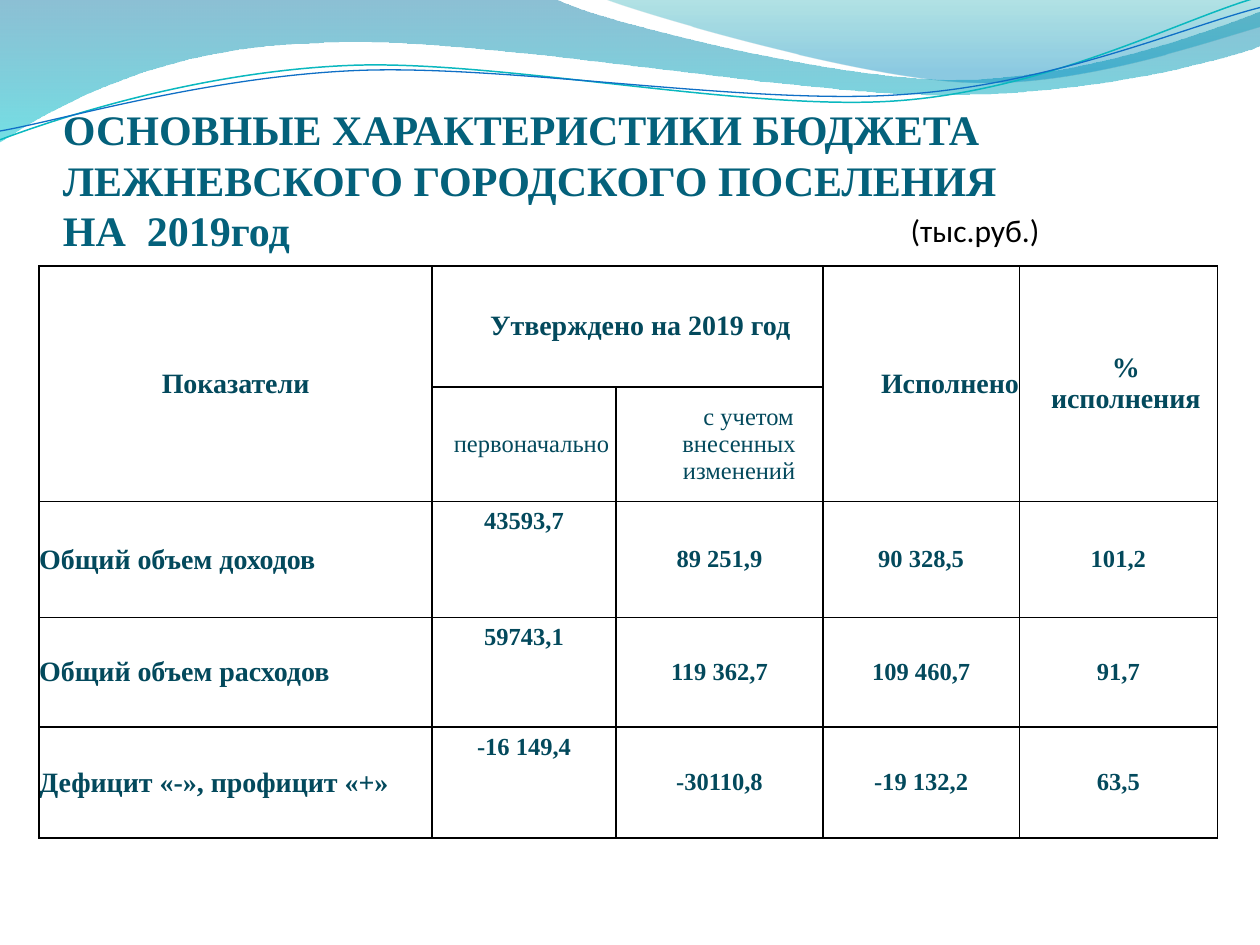
from dataclasses import dataclass

import pptx
import pptx.dml.color
import pptx.enum.text
import pptx.oxml
import pptx.oxml.ns
import pptx.util
from lxml import etree
from pptx.util import Cm

RGBColor = pptx.dml.color.RGBColor
Align = pptx.enum.text.PP_ALIGN
Anchor = pptx.enum.text.MSO_ANCHOR

BLACK = RGBColor(0x00, 0x00, 0x00)
TITLE_TEAL = RGBColor(0x04, 0x61, 0x7B)
TABLE_TEAL = RGBColor(0x03, 0x49, 0x5C)
DEEP_BLUE = RGBColor(0x00, 0x74, 0xA1)
CYAN = RGBColor(0x00, 0xC6, 0xCF)
SEA_GREEN = RGBColor(0x00, 0xA1, 0xA9)
SKY_BLUE = RGBColor(0x00, 0x8B, 0xBF)
LINE_TEAL = RGBColor(0x0A, 0xB8, 0xBF)
LINE_BLUE = RGBColor(0x0F, 0x6F, 0xC6)

SERIF = "Times New Roman"
WAVE_UNIT = Cm(2.54) / 100  # wave points are hundredths of an inch


@dataclass
class Stop:
    position: float
    color: RGBColor
    opacity: int


@dataclass
class Wave:
    """A start point, then steps: one point for a line, three for a Bezier curve."""
    start: tuple
    steps: list
    stops: tuple = ()
    line: RGBColor | None = None
    width: float = 0


@dataclass
class Cell:
    row: int
    column: int
    text: str
    size: float = 14
    bold: bool = True
    align: Align = Align.CENTER
    indent: float = 0
    first_indent: float = 0
    space_after: float = 0
    last_row: int | None = None
    last_column: int | None = None
    padded: bool = False


WAVES = [
    Wave((0, 0), [[(440, -1)], [(476, 17), (664, 63), (758, 63)],
                  [(853, 63), (958, 26), (1000, 9)], [(1001, 36)],
                  [(983, 44), (870, 76), (746, 75)], [(622, 75), (382, 28), (257, 34)],
                  [(129, 36), (46, 83), (-1, 113)]],
         stops=(Stop(0, DEEP_BLUE, 45), Stop(1, CYAN, 55))),
    Wave((479, -1), [[(509, 11), (682, 62), (769, 65)], [(856, 69), (961, 32), (1000, 21)],
                     [(1000, 0)]],
         stops=(Stop(0, SEA_GREEN, 30), Stop(0.8, SKY_BLUE, 45))),
    Wave((0, 111), [[(48, 93), (158, 57), (277, 52)], [(395, 47), (593, 89), (713, 80)],
                    [(833, 71), (938, 15), (998, -2)]], line=LINE_TEAL, width=0.85),
    Wave((0, 104), [[(47, 96), (164, 61), (283, 56)], [(403, 51), (597, 84), (717, 75)],
                    [(836, 67), (941, 21), (1000, 6)]], line=LINE_BLUE, width=0.75),
]

COLUMN_WIDTHS = [7.92, 3.71, 4.17, 3.96, 3.99]
ROW_HEIGHTS = [2.44, 2.31, 2.34, 2.21, 2.23]
HEADERS = [
    Cell(0, 0, "Показатели", size=16, last_row=1),
    Cell(0, 1, "Утверждено на 2019 год", size=16, align=Align.LEFT, indent=1.17, last_column=2),
    Cell(0, 3, "Исполнено", size=16, align=Align.LEFT, indent=1.17, last_row=1),
    Cell(0, 4, "% исполнения", size=16, indent=0.3, space_after=10.5, last_row=1),
    Cell(1, 1, "первоначально", bold=False, indent=0.3),
    Cell(1, 2, "с учетом внесенных изменений", bold=False, indent=0.79, first_indent=0.38),
]
RECORDS = [
    ("Общий объем доходов", "43593,7", "89 251,9", "90 328,5", "101,2"),
    ("Общий объем расходов", "59743,1", "119 362,7", "109 460,7", "91,7"),
    ("Дефицит «-», профицит «+»", "-16 149,4", "-30110,8", "-19 132,2", "63,5"),
]


def write_text(frame, text: str, *, size: float, color: RGBColor, font: str = SERIF,
               bold: bool = False, align: Align = Align.LEFT, indent: float = 0,
               first_indent: float = 0, space_after: float = 0) -> None:
    para = frame.paragraphs[0]
    para.alignment = align
    para.space_after = pptx.util.Pt(space_after)
    properties = para._p.get_or_add_pPr()
    properties.set("marL", str(Cm(indent)))
    properties.set("indent", str(Cm(first_indent)))
    for number, line in enumerate(text.split("\n")):
        if number:
            para.add_line_break()
        span = para.add_run()
        span.text = line
        span.font.name = font
        span.font.size = pptx.util.Pt(size)
        span.font.bold = bold
        span.font.color.rgb = color


def add_text_box(page, left: float, top: float, width: float, height: float):
    box = page.shapes.add_textbox(Cm(left), Cm(top), Cm(width), Cm(height))
    box.text_frame.word_wrap = True
    return box.text_frame


def bend_segments(shape, steps: list) -> None:
    """Join each three straight segments of a curved step into one Bezier curve."""
    segments = iter(list(shape._element.spPr.iter(pptx.oxml.ns.qn("a:lnTo"))))
    for step in steps:
        lines = [next(segments) for _ in step]
        if len(lines) == 1:
            continue
        curve = etree.Element(pptx.oxml.ns.qn("a:cubicBezTo"))
        lines[0].addprevious(curve)
        for line in lines:
            curve.append(line[0])
            line.getparent().remove(line)


def draw_wave(page, wave: Wave) -> None:
    builder = page.shapes.build_freeform(*wave.start, scale=WAVE_UNIT)
    builder.add_line_segments([point for step in wave.steps for point in step],
                              close=bool(wave.stops))
    shape = builder.convert_to_shape()
    bend_segments(shape, wave.steps)
    shape.shadow.inherit = False
    if wave.stops:
        shape.line.fill.background()
        shape.fill.gradient()
        shape.fill.gradient_angle = 270
        for target, stop in zip(shape.fill.gradient_stops, wave.stops):
            target.position = stop.position
            target.color.rgb = stop.color
        for color, stop in zip(shape._element.spPr.iter(pptx.oxml.ns.qn("a:srgbClr")), wave.stops):
            alpha = etree.SubElement(color, pptx.oxml.ns.qn("a:alpha"))
            alpha.set("val", str(stop.opacity * 1000))
    else:
        shape.fill.background()
        shape.line.color.rgb = wave.line
        shape.line.width = pptx.util.Pt(wave.width)


def add_borders(cell) -> None:
    properties = cell._tc.get_or_add_tcPr()
    for side in ("lnL", "lnR", "lnT", "lnB"):
        properties.append(pptx.oxml.parse_xml(
            f'<a:{side} {pptx.oxml.ns.nsdecls("a")} w="{pptx.util.Pt(1)}">'
            f'<a:solidFill><a:srgbClr val="{BLACK}"/></a:solidFill></a:{side}>'))


def fill_cell(table, item: Cell) -> None:
    cell = table.cell(item.row, item.column)
    if item.last_row is not None or item.last_column is not None:
        cell.merge(table.cell(item.last_row or item.row, item.last_column or item.column))
    if not item.padded:
        cell.vertical_anchor = Anchor.MIDDLE
        cell.margin_left = cell.margin_right = cell.margin_top = cell.margin_bottom = 0
    write_text(cell.text_frame, item.text, size=item.size, color=TABLE_TEAL, bold=item.bold,
               align=item.align, indent=item.indent, first_indent=item.first_indent,
               space_after=item.space_after)


def draw_budget_table(page) -> None:
    table = page.shapes.add_table(len(ROW_HEIGHTS), len(COLUMN_WIDTHS), Cm(0.79), Cm(5.36),
                                  Cm(sum(COLUMN_WIDTHS)), Cm(sum(ROW_HEIGHTS))).table
    table.first_row = table.horz_banding = False
    for column, width in zip(table.columns, COLUMN_WIDTHS):
        column.width = Cm(width)
    for row, height in zip(table.rows, ROW_HEIGHTS):
        row.height = Cm(height)
    for cell in table.iter_cells():
        add_borders(cell)
        cell.fill.background()
    for item in HEADERS:
        fill_cell(table, item)
    for row, (label, *values) in enumerate(RECORDS, start=2):
        fill_cell(table, Cell(row, 0, label, size=16, align=Align.LEFT))
        for column, value in enumerate(values, start=1):
            fill_cell(table, Cell(row, column, value, padded=column == 1))


def main() -> None:
    deck = pptx.Presentation()
    deck.slide_width, deck.slide_height = Cm(25.4), Cm(19.05)
    page = deck.slides.add_slide(deck.slide_layouts[6])
    for wave in WAVES:
        draw_wave(page, wave)
    write_text(add_text_box(page, 18.11, 4.12, 4.6, 1.02), "(тыс.руб.)",
               size=18, color=BLACK, font="Calibri")
    title = add_text_box(page, 1.27, 1.96, 22.86, 3.18)
    title.vertical_anchor = Anchor.BOTTOM
    title.margin_left = title.margin_right = title.margin_bottom = 0
    write_text(title, "ОСНОВНЫЕ ХАРАКТЕРИСТИКИ БЮДЖЕТА \nЛЕЖНЕВСКОГО ГОРОДСКОГО ПОСЕЛЕНИЯ \n"
               "НА  2019год", size=24, color=TITLE_TEAL, bold=True)
    draw_budget_table(page)
    deck.save("out.pptx")


if __name__ == "__main__":
    main()
